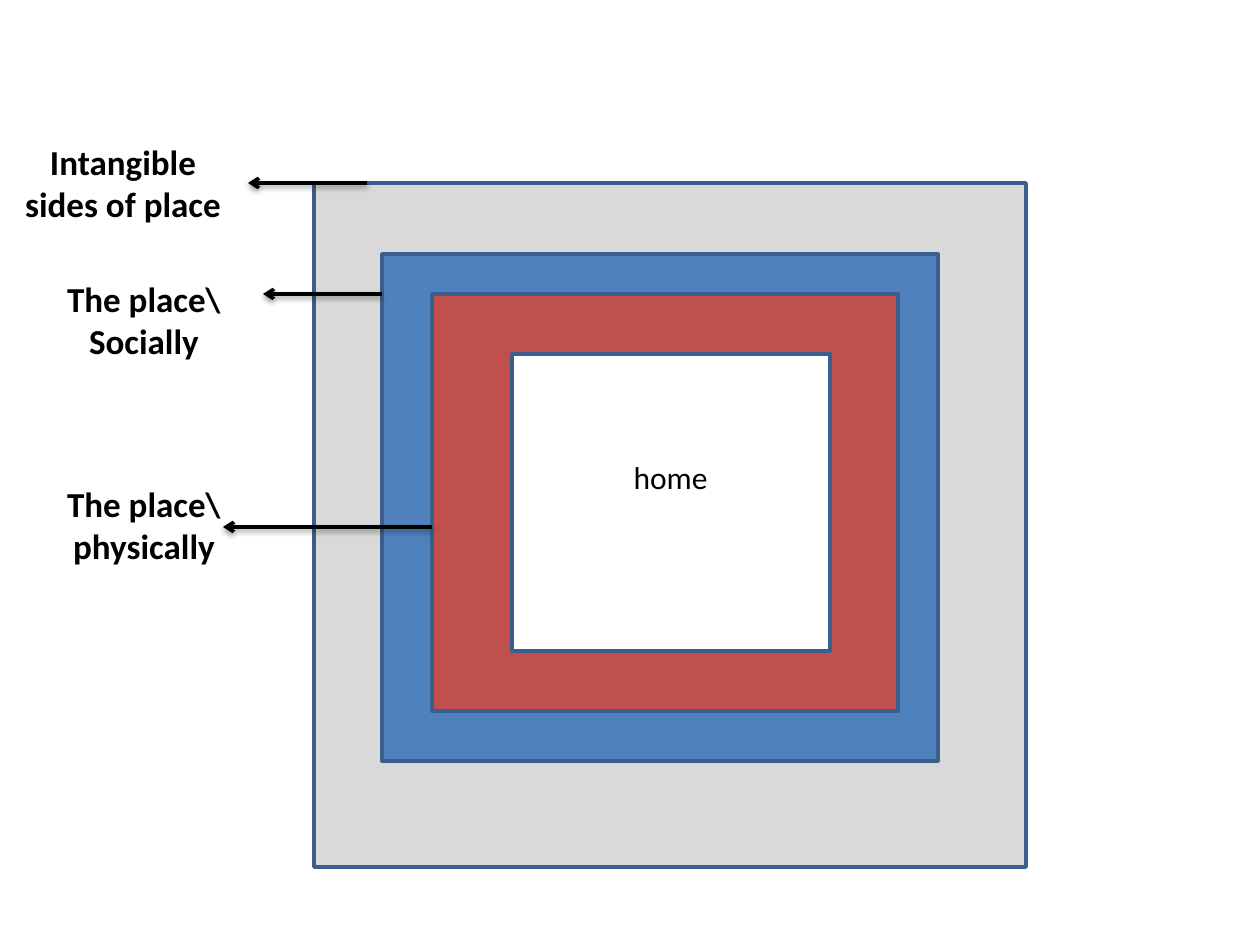
from lxml import etree
from pptx import Presentation
from pptx.dml.color import RGBColor
from pptx.enum.shapes import MSO_CONNECTOR, MSO_SHAPE
from pptx.enum.text import PP_ALIGN
from pptx.oxml import parse_xml
from pptx.oxml.ns import nsdecls, qn
from pptx.util import Pt

RECT = MSO_SHAPE.RECTANGLE
LINE = MSO_CONNECTOR.STRAIGHT
CENTER = PP_ALIGN.CENTER
GREY = RGBColor(0xD9, 0xD9, 0xD9)
BLUE = RGBColor(0x4F, 0x81, 0xBD)
RED = RGBColor(0xC0, 0x50, 0x4D)
WHITE = RGBColor(0xFF, 0xFF, 0xFF)
BLACK = RGBColor(0, 0, 0)
EDGE = RGBColor(0x3A, 0x5F, 0x8C)
SHADOW = f"""<a:effectLst {nsdecls('a')}>
  <a:outerShdw blurRad="40000" dist="20000" dir="5400000" rotWithShape="0">
    <a:srgbClr val="000000"><a:alpha val="38000"/></a:srgbClr>
  </a:outerShdw>
</a:effectLst>"""


def px(*nums):
    """Turn px at 126 to the inch into EMU."""
    return [round(n * 914400 / 126) for n in nums]


def add_text(slide, box, text, size, bold=False):
    frame = slide.shapes.add_textbox(*px(*box)).text_frame
    frame.word_wrap = True
    para = frame.paragraphs[0]
    para.text = text
    para.alignment = CENTER
    para._p.get_or_add_pPr().set("rtl", "1")
    font = para.font
    font.name, font.size, font.bold = "Calibri", Pt(size), bold
    font.color.rgb = BLACK


def add_ring(slide, box, fill):
    ring = slide.shapes.add_shape(RECT, *px(*box))
    ring.shadow.inherit = False
    ring.fill.solid()
    ring.fill.fore_color.rgb = fill
    ring.line.color.rgb = EDGE
    ring.line.width = Pt(2)


def add_arrow(slide, start, end, y):
    arrow = slide.shapes.add_connector(LINE, *px(start, y, end, y))
    arrow.line.color.rgb = BLACK
    arrow.line.width = Pt(2)
    etree.SubElement(arrow.line._ln, qn("a:tailEnd"), type="arrow")
    arrow._element.spPr.append(parse_xml(SHADOW))


def add_nest(slide, left, top):
    """Draw the nested places, outermost first, with home at the core."""
    rings = [
        (0, 0, 712, 684, GREY),
        (68, 71, 556, 507, BLUE),
        (118, 111, 466, 417, RED),
        (198, 171, 318, 297, WHITE),
    ]
    for x, y, width, height, fill in rings:
        add_ring(slide, (left + x, top + y, width, height), fill)
    add_text(slide, (left + 277, top + 269, 159, 50), "home", 18)


def add_label(slide, left, top, text, start, end, y):
    """Place a label and the arrow that leads to it from a ring."""
    add_arrow(slide, start, end, y)
    add_text(slide, (left, top, 238, 97), text, 20, True)


def main():
    deck = Presentation()
    deck.slide_width, deck.slide_height = px(1260, 945)
    slide = deck.slides.add_slide(deck.slide_layouts[6])
    add_nest(slide, 314, 183)
    labels = [
        (4, 134, "Intangible sides of place", 367, 248, 183),
        (25, 271, "The place\\ Socially", 382, 263, 294),
        (25, 476, "The place\\ physically", 432, 223, 527),
    ]
    for label in labels:
        add_label(slide, *label)
    deck.save("out.pptx")


if __name__ == "__main__":
    main()
